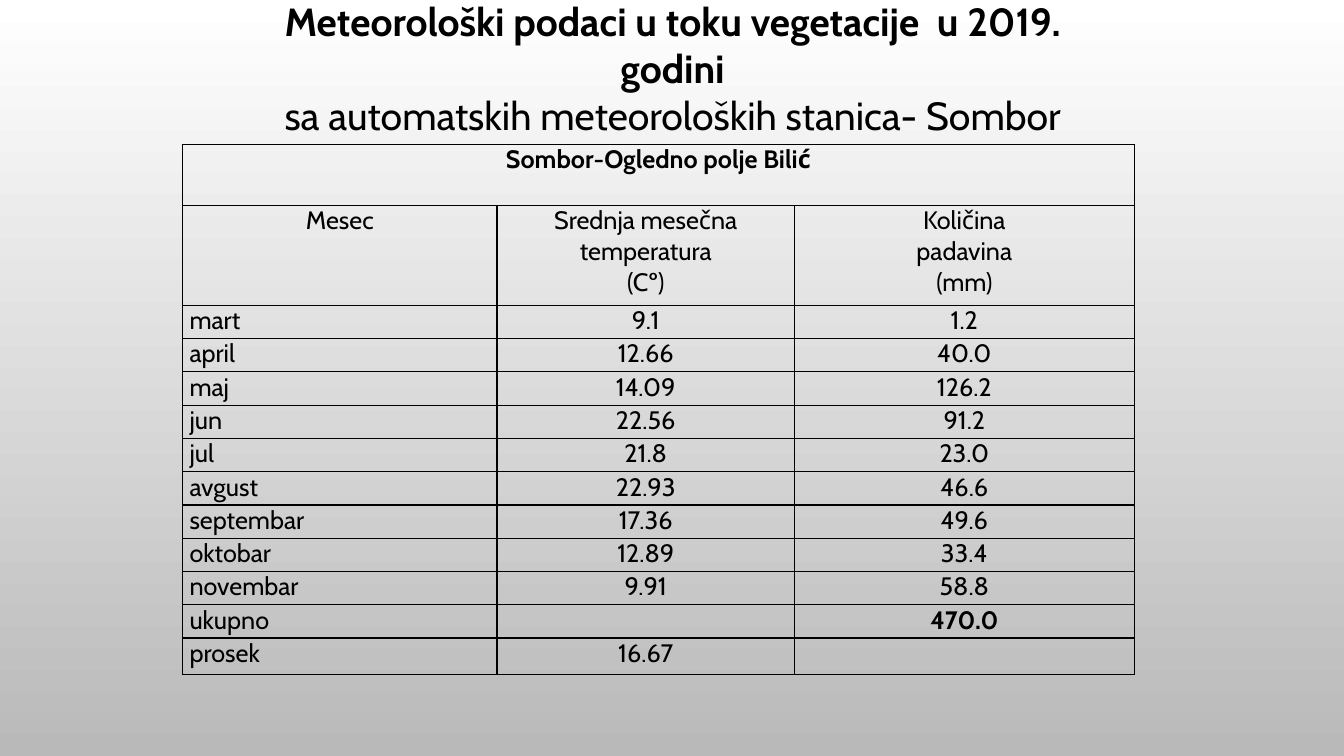
"""Build a slide with a table of monthly weather data."""
import dataclasses

import lxml.etree
import pptx
import pptx.dml.color
import pptx.enum.text
import pptx.oxml.ns
import pptx.util

ALIGN = pptx.enum.text.PP_ALIGN
ANCHOR = pptx.enum.text.MSO_ANCHOR
RGB = pptx.dml.color.RGBColor.from_string


@dataclasses.dataclass(frozen=True)
class Theme:
    """Hold the colours, font and type sizes."""
    font: str = "Cabin"
    ink: str = "000000"
    top: str = "FFFFFF"
    base: str = "B9B9B9"
    head: int = 28
    body: int = 18
    line: int = 1


THEME = Theme()
TITLE = (("Meteorološki podaci u toku vegetacije  u 2019. godini", True),
         ("sa automatskih meteoroloških stanica- Sombor", False))
PLACE = "Sombor-Ogledno polje Bilić"
HEADS = ("Mesec", "Srednja mesečna temperatura\n(Cº)", "Količina\npadavina\n(mm)")
DATA = (
    ("mart", "9.1", "1.2"),
    ("april", "12.66", "40.0"),
    ("maj", "14.09", "126.2"),
    ("jun", "22.56", "91.2"),
    ("jul", "21.8", "23.0"),
    ("avgust", "22.93", "46.6"),
    ("septembar", "17.36", "49.6"),
    ("oktobar", "12.89", "33.4"),
    ("novembar", "9.91", "58.8"),
    ("ukupno", "", "470.0"),
    ("prosek", "16.67", ""),
)
TOTAL = "470.0"
WIDTHS = (312, 295, 337)
HEIGHTS = (61, 99) + (33,) * (len(DATA) - 1) + (36,)


def px(count):
    """Turn px, a hundred to the inch, into EMU."""
    return pptx.util.Emu(count * 9144)


def write(para, text, size=THEME.body, bold=False, align=ALIGN.CENTER):
    """Add one run of formatted text to a paragraph."""
    para.alignment = align
    run = para.add_run()
    run.text = text
    font = run.font
    font.name, font.size, font.bold = THEME.font, pptx.util.Pt(size), bold
    font.color.rgb = RGB(THEME.ink)


def paint(slide):
    """Fill the background with a vertical gradient."""
    fill = slide.background.fill
    fill.gradient()
    fill.gradient_angle = 270
    for stop, tone in zip(fill.gradient_stops, (THEME.top, THEME.base)):
        stop.color.rgb = RGB(tone)


def add_title(slide):
    """Place and fill the title."""
    title = slide.shapes.title
    title.left, title.top, title.width, title.height = map(px, (218, 15, 898, 104))
    frame = title.text_frame
    frame.word_wrap = True
    frame.auto_size = pptx.enum.text.MSO_AUTO_SIZE.NONE
    frame.vertical_anchor = ANCHOR.MIDDLE
    for index, (text, bold) in enumerate(TITLE):
        para = frame.add_paragraph() if index else frame.paragraphs[0]
        write(para, text, size=THEME.head, bold=bold)


def border(cell):
    """Draw a solid line on each side of a cell."""
    qn = pptx.oxml.ns.qn
    props = cell._tc.get_or_add_tcPr()
    for side in ("a:lnL", "a:lnR", "a:lnT", "a:lnB"):
        line = lxml.etree.SubElement(props, qn(side), w=str(pptx.util.Pt(THEME.line)))
        fill = lxml.etree.SubElement(line, qn("a:solidFill"))
        lxml.etree.SubElement(fill, qn("a:srgbClr"), val=THEME.ink)


def fill_cell(cell, text, **form):
    """Style a cell and write its lines."""
    border(cell)
    cell.fill.background()
    cell.margin_left = cell.margin_right = px(7)
    cell.margin_top = cell.margin_bottom = 0
    cell.vertical_anchor = ANCHOR.TOP
    frame = cell.text_frame
    for index, line in enumerate(text.split("\n") if text else ()):
        para = frame.add_paragraph() if index else frame.paragraphs[0]
        write(para, line, **form)


def add_grid(slide):
    """Add the table of months."""
    rows = ((PLACE, "", ""), HEADS) + DATA
    box = map(px, (181, 143, sum(WIDTHS), sum(HEIGHTS)))
    grid = slide.shapes.add_table(len(rows), len(WIDTHS), *box).table
    grid.first_row = grid.horz_banding = False
    for col, width in zip(grid.columns, WIDTHS):
        col.width = px(width)
    for row, height in zip(grid.rows, HEIGHTS):
        row.height = px(height)
    grid.cell(0, 0).merge(grid.cell(0, len(WIDTHS) - 1))
    for r, row in enumerate(rows):
        for c, text in enumerate(row):
            align = ALIGN.LEFT if r > 1 and c == 0 else ALIGN.CENTER
            fill_cell(grid.cell(r, c), text, bold=text in (PLACE, TOTAL), align=align)


def main():
    """Build and save the deck."""
    deck = pptx.Presentation()
    deck.slide_width, deck.slide_height = px(1333), px(750)
    slide = deck.slides.add_slide(deck.slide_layouts[5])
    paint(slide)
    add_title(slide)
    add_grid(slide)
    deck.save("out.pptx")


if __name__ == "__main__":
    main()
